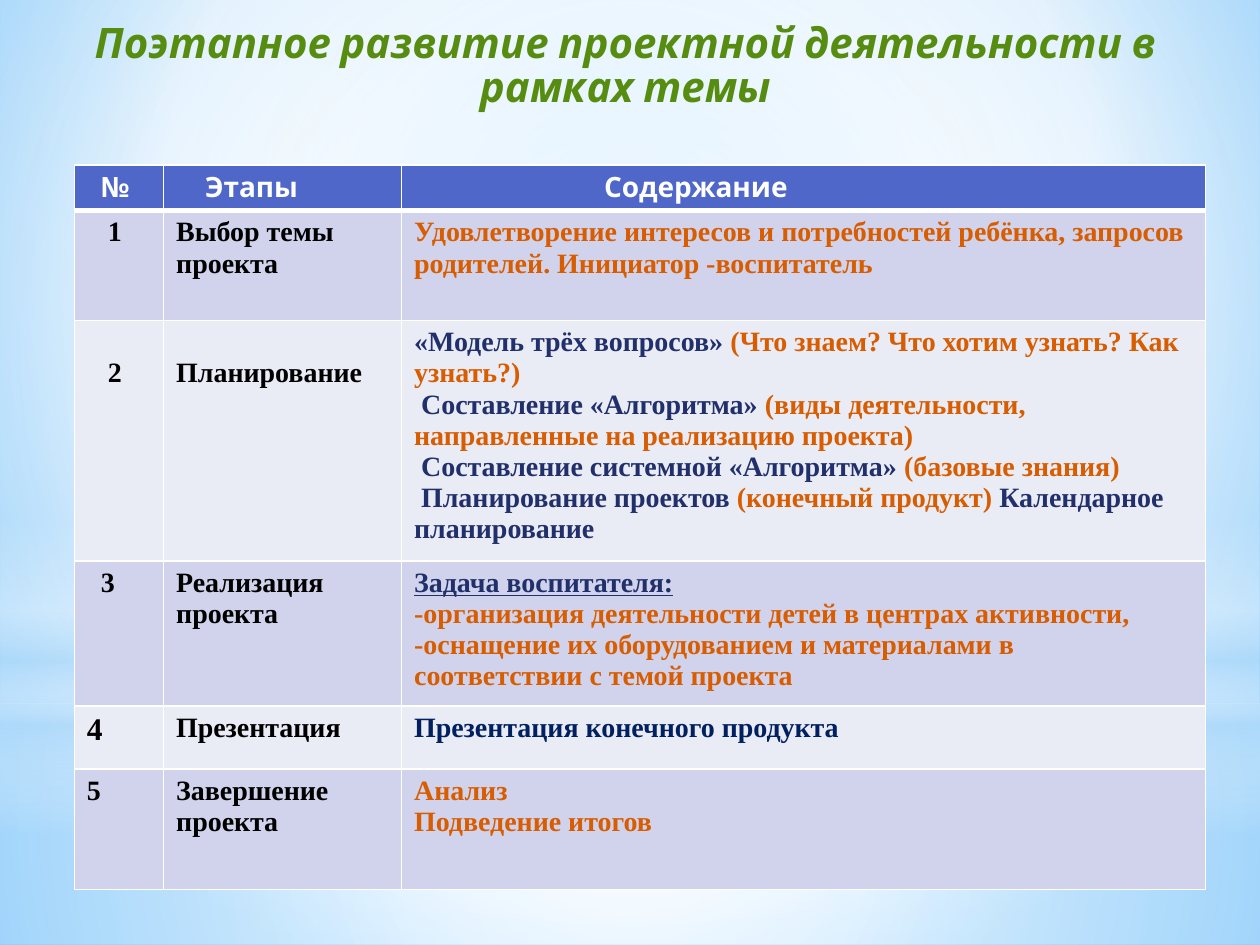
"""Build a slide with a table of the stages of project work."""
from lxml import etree
from pptx import Presentation
from pptx.dml.color import RGBColor
from pptx.enum import shapes, text
from pptx.oxml import ns, parse_xml
from pptx.util import Pt

hues = {"white": "FFFFFF", "sky": "B4DCFA", "pale": "9ED5FF", "deep": "5BB9FF",
        "green": "568D11", "head": "4E67C8", "odd": "D0D3EB", "even": "E9EBF5",
        "black": "000000", "rust": "D85C00", "navy": "21306A", "ink": "002060"}
serif = "Times New Roman"


def write(para, words, hue="black", size=16, font=serif, slant=False, under=False):
    run = para.add_run()
    run.text = words
    run.font.name, run.font.size = font, Pt(size)
    run.font.bold, run.font.italic, run.font.underline = True, slant, under
    run.font.color.rgb = RGBColor.from_string(hues[hue])


def blend(stops, rect=None):
    marks = "".join(
        f'<a:gs pos="{pos * 1000}"><a:srgbClr val="{hues[hue]}">'
        f'<a:alpha val="{alpha * 1000}"/></a:srgbClr></a:gs>'
        for pos, hue, alpha in stops)
    way = '<a:lin ang="5400000" scaled="0"/>'
    if rect:
        left, top, right, low = (side * 1000 for side in rect)
        way = (f'<a:path path="circle"><a:fillToRect l="{left}" t="{top}" '
               f'r="{right}" b="{low}"/></a:path>')
    return parse_xml(f'<a:gradFill {ns.nsdecls("a")} rotWithShape="1">'
                     f'<a:gsLst>{marks}</a:gsLst>{way}</a:gradFill>')


deck = Presentation()
deck.slide_width, deck.slide_height = Pt(720), Pt(540)
slide = deck.slides.add_slide(deck.slide_layouts[5])

back = slide.background.fill
back.gradient()
base = slide.element.find(".//" + ns.qn("a:gradFill"))
base.getparent().replace(base, blend(
    [(0, "pale", 100), (60, "white", 100), (100, "deep", 100)], (20, 10, 20, 60)))

mid = (50, 50, 50, 50)
box, oval = shapes.MSO_SHAPE.RECTANGLE, shapes.MSO_SHAPE.OVAL
glows = [
    (box, 401.8, 138.2, mid, [(0, "white", 91), (37, "white", 76), (100, "sky", 79)]),
    (box, 0, 401.8, mid, [(0, "white", 89), (48, "white", 62), (100, "sky", 79)]),
    (box, 296.6, 180, None, [(0, "white", 0), (29, "white", 30), (45, "sky", 40),
                             (55, "white", 26), (65, "sky", 60), (100, "white", 0)]),
    (oval, 126, 401.8, mid, [(0, "white", 100), (56, "white", 0)]),
]
for kind, top, high, rect, stops in glows:
    glow = slide.shapes.add_shape(kind, 0, Pt(top), Pt(720), Pt(high))
    glow.shadow.inherit = False
    glow.line.fill.background()
    glow.fill.solid()
    old = glow.element.spPr.find(ns.qn("a:solidFill"))
    old.getparent().replace(old, blend(stops, rect))

title = slide.shapes.title
slide.shapes.element.append(title.element)
title.left, title.top, title.width, title.height = Pt(14.4), Pt(9.4), Pt(686), Pt(516)
frame = title.text_frame
frame.word_wrap = True
frame.auto_size = text.MSO_AUTO_SIZE.NONE
frame.vertical_anchor = text.MSO_ANCHOR.TOP
para = frame.paragraphs[0]
para.alignment = text.PP_ALIGN.CENTER
para.line_spacing, para.space_before, para.space_after = 0.88, Pt(3), Pt(3)
write(para, "Поэтапное развитие проектной деятельности в рамках темы",
      "green", 24, "Karla", slant=True)

heads = [("№", 8), ("Этапы", 16.5), ("Содержание", 108.5)]
stages = [
    ("1", 12, 16, "Выбор темы проекта", [
        [("Удовлетворение интересов и потребностей ребёнка, запросов родителей. "
          "Инициатор -воспитатель", "rust")]]),
    ("2", 12, 16, "Планирование", [
        [("«Модель трёх вопросов» ", "navy"),
         ("(Что знаем? Что хотим узнать? Как узнать?)", "rust")],
        [("Составление «Алгоритма» ", "navy"),
         ("(виды деятельности, направленные на реализацию проекта)", "rust")],
        [("Составление системной «Алгоритма»", "navy"), (" (базовые знания)", "rust")],
        [("Планирование проектов ", "navy"), ("(конечный продукт) ", "rust"),
         ("Календарное планирование", "navy")]]),
    ("3", 8, 16, "Реализация проекта", [
        [("Задача воспитателя:", "navy")],
        [("-организация деятельности детей в центрах активности,", "rust")],
        [("-оснащение их оборудованием и материалами в", "rust")],
        [("соответствии с темой проекта", "rust")]]),
    ("4", 0, 18, "Презентация", [[("Презентация конечного продукта", "ink")]]),
    ("5", 0, 16, "Завершение проекта", [[("Анализ", "rust")],
                                        [("Подведение итогов", "rust")]]),
]
wides = [51, 136, 459.5]
highs = [26, 62.8, 137.4, 82.8, 36, 69]
table = slide.shapes.add_table(len(highs), len(wides), Pt(42.5), Pt(94.4),
                               Pt(sum(wides)), Pt(sum(highs))).table
for col, wide in zip(table.columns, wides):
    col.width = Pt(wide)
for row, high in zip(table.rows, highs):
    row.height = Pt(high)

for y, row in enumerate(table.rows):
    for cell in row.cells:
        cell.fill.solid()
        shade = "head" if y == 0 else "odd" if y % 2 else "even"
        cell.fill.fore_color.rgb = RGBColor.from_string(hues[shade])
        props = cell._tc.get_or_add_tcPr()
        for spot, side in enumerate("LRTB"):
            thick = 3 if (y, side) in [(0, "B"), (1, "T")] else 1
            edge = etree.Element(ns.qn("a:ln" + side), w=str(Pt(thick)))
            fill = etree.SubElement(edge, ns.qn("a:solidFill"))
            etree.SubElement(fill, ns.qn("a:srgbClr"), val=hues["white"])
            props.insert(spot, edge)

for x, (name, inset) in enumerate(heads):
    para = table.cell(0, x).text_frame.paragraphs[0]
    para._p.get_or_add_pPr().set("marL", str(Pt(inset)))
    write(para, name, "white", font="Karla")

for y, (mark, inset, size, stage, lines) in enumerate(stages, 1):
    num, name, body = table.rows[y].cells
    para = num.text_frame.paragraphs[0]
    para._p.get_or_add_pPr().set("marL", str(Pt(inset)))
    write(para, mark, size=size)
    write(name.text_frame.paragraphs[0], stage)
    if stage == "Планирование":
        num.margin_top = name.margin_top = Pt(21.3)
    for i, line in enumerate(lines):
        para = body.text_frame.add_paragraph() if i else body.text_frame.paragraphs[0]
        if i and stage == "Планирование":
            para._p.get_or_add_pPr().set("indent", str(Pt(4)))
        for words, hue in line:
            write(para, words, hue, under=words.startswith("Задача"))

deck.save("out.pptx")
